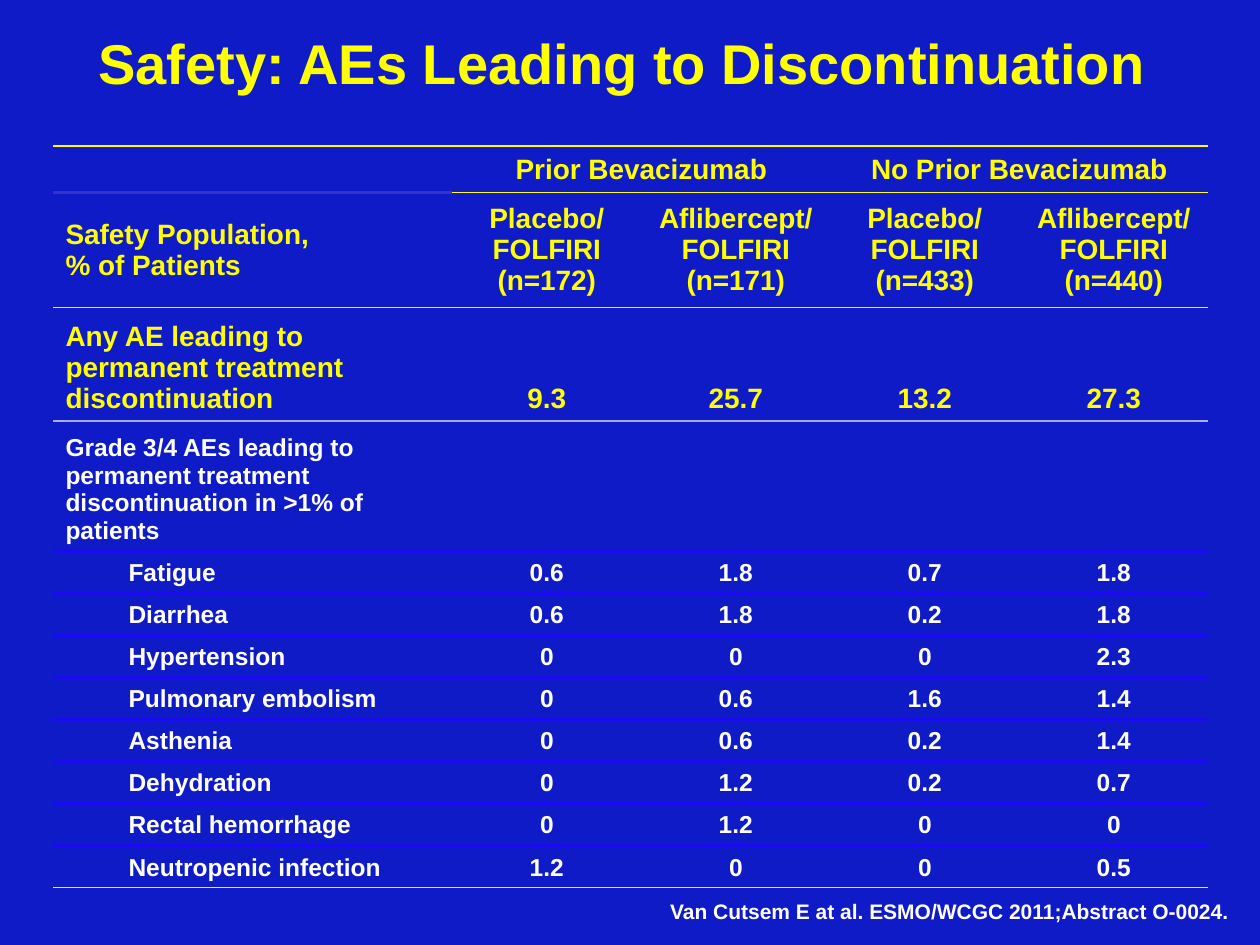
import pptx
import pptx.dml.color
import pptx.enum.text
import pptx.oxml.ns
import pptx.util
from lxml import etree

Inches = pptx.util.Inches
RGBColor = pptx.dml.color.RGBColor
ALIGN = pptx.enum.text.PP_ALIGN
ANCHOR = pptx.enum.text.MSO_ANCHOR

BLUE = RGBColor(0x0F, 0x1B, 0xC6)
YELLOW = RGBColor(0xFF, 0xFF, 0x00)
WHITE = RGBColor(0xFF, 0xFF, 0xFF)
LAVENDER = RGBColor(0xAB, 0xAA, 0xF5)
VIOLET = RGBColor(0x1A, 0x0A, 0xEE)
INDIGO = RGBColor(0x33, 0x33, 0xCC)

HEADER_ROWS = 2
COLUMN_WIDTHS = [3.17] + [1.5] * 4
ROWS = [
    ["", "Prior Bevacizumab", "", "No Prior Bevacizumab", ""],
    ["Safety Population,\n% of Patients",
     "Placebo/ FOLFIRI\n(n=172)", "Aflibercept/\nFOLFIRI\n(n=171)",
     "Placebo/\nFOLFIRI\n(n=433)", "Aflibercept/\nFOLFIRI\n(n=440)"],
    ["Any AE leading to permanent treatment discontinuation",
     "9.3", "25.7", "13.2", "27.3"],
    ["Grade 3/4 AEs leading to permanent treatment discontinuation "
     "in >1% of patients", "", "", "", ""],
    ["Fatigue", "0.6", "1.8", "0.7", "1.8"],
    ["Diarrhea", "0.6", "1.8", "0.2", "1.8"],
    ["Hypertension", "0", "0", "0", "2.3"],
    ["Pulmonary embolism", "0", "0.6", "1.6", "1.4"],
    ["Asthenia", "0", "0.6", "0.2", "1.4"],
    ["Dehydration", "0", "1.2", "0.2", "0.7"],
    ["Rectal hemorrhage", "0", "1.2", "0", "0"],
    ["Neutropenic infection", "1.2", "0", "0", "0.5"],
]
FIRST_EVENT_ROW = 4
EVENT_COUNT = len(ROWS) - FIRST_EVENT_ROW
ROW_HEIGHTS = [0.37, 0.91, 0.84, 0.98] + [0.33] * EVENT_COUNT

# Horizontal rules from the top edge to the bottom edge: colour and points
THIN_YELLOW = (YELLOW, 1)
RULES = ([THIN_YELLOW] * 3 + [(LAVENDER, 1)]
         + [(VIOLET, 2.25)] * EVENT_COUNT + [THIN_YELLOW])
LABEL_HEADER_RULE = (INDIGO, 2.25)


def write_text(text_frame, text, size, color, align=ALIGN.LEFT, indent=0):
    """Write bold Arial text, one paragraph for each line."""
    text_frame.text = text
    for paragraph in text_frame.paragraphs:
        paragraph.alignment = align
        if indent:
            paragraph.level = 1
            properties = paragraph._p.get_or_add_pPr()
            properties.set("marL", str(Inches(indent)))
            properties.set("indent", "0")
        paragraph.font.size = pptx.util.Pt(size)
        for run in paragraph.runs:
            run.font.name = "Arial"
            run.font.size = pptx.util.Pt(size)
            run.font.bold = True
            run.font.color.rgb = color


def add_text_box(slide, left, top, width, height, text, wrap=True,
                 anchor=ANCHOR.TOP, **text_format):
    shape = slide.shapes.add_textbox(
        Inches(left), Inches(top), Inches(width), Inches(height))
    shape.text_frame.word_wrap = wrap
    shape.text_frame.vertical_anchor = anchor
    write_text(shape.text_frame, text, **text_format)
    return shape


def add_border(cell, side, rule=None):
    """Draw one cell edge, or hide it when no rule is given."""
    qn = pptx.oxml.ns.qn
    line = etree.SubElement(cell._tc.get_or_add_tcPr(), qn("a:ln" + side))
    if rule is None:
        etree.SubElement(line, qn("a:noFill"))
        return
    color, points = rule
    line.set("w", str(pptx.util.Pt(points)))
    fill = etree.SubElement(line, qn("a:solidFill"))
    etree.SubElement(fill, qn("a:srgbClr")).set("val", str(color))


def rule_at(boundary, column):
    if boundary == 1 and column == 0:
        return LABEL_HEADER_RULE
    return RULES[boundary]


def format_cell(cell, row, column):
    add_border(cell, "L")
    add_border(cell, "R")
    add_border(cell, "T", rule_at(row, column))
    add_border(cell, "B", rule_at(row + 1, column))
    if row < HEADER_ROWS:
        cell.fill.solid()
        cell.fill.fore_color.rgb = BLUE
        cell.vertical_anchor = ANCHOR.MIDDLE
    else:
        cell.fill.background()
        cell.vertical_anchor = ANCHOR.BOTTOM


def add_safety_table(slide):
    shape = slide.shapes.add_table(
        len(ROWS), len(COLUMN_WIDTHS), Inches(0.42), Inches(1.16),
        Inches(sum(COLUMN_WIDTHS)), Inches(sum(ROW_HEIGHTS)))
    table = shape.table
    table.first_row = False
    table.horz_banding = False
    for column, width in zip(table.columns, COLUMN_WIDTHS):
        column.width = Inches(width)
    for row, height in zip(table.rows, ROW_HEIGHTS):
        row.height = Inches(height)
    for row, texts in enumerate(ROWS):
        is_summary = row <= HEADER_ROWS
        for column, text in enumerate(texts):
            cell = table.cell(row, column)
            format_cell(cell, row, column)
            is_event = column == 0 and row >= FIRST_EVENT_ROW
            write_text(cell.text_frame, text,
                       size=16 if is_summary else 14,
                       color=YELLOW if is_summary else WHITE,
                       align=ALIGN.CENTER if column else ALIGN.LEFT,
                       indent=0.5 if is_event else 0)
    for column in (1, 3):
        table.cell(0, column).merge(table.cell(0, column + 1))


def main():
    presentation = pptx.Presentation()
    presentation.slide_width = Inches(10)
    presentation.slide_height = Inches(7.5)
    slide = presentation.slides.add_slide(presentation.slide_layouts[6])
    slide.background.fill.solid()
    slide.background.fill.fore_color.rgb = BLUE

    add_text_box(slide, 0, -0.06, 10, 1.1,
                 "Safety: AEs Leading to Discontinuation ",
                 anchor=ANCHOR.MIDDLE, size=32, color=YELLOW,
                 align=ALIGN.CENTER)
    add_safety_table(slide)
    citation = add_text_box(
        slide, 5.22, 7.08, 4.7, 0.3,
        "Van Cutsem E at al. ESMO/WCGC 2011;Abstract O-0024.",
        wrap=False, size=12, color=WHITE)
    citation.text_frame.auto_size = pptx.enum.text.MSO_AUTO_SIZE.SHAPE_TO_FIT_TEXT

    presentation.save("out.pptx")


if __name__ == "__main__":
    main()
